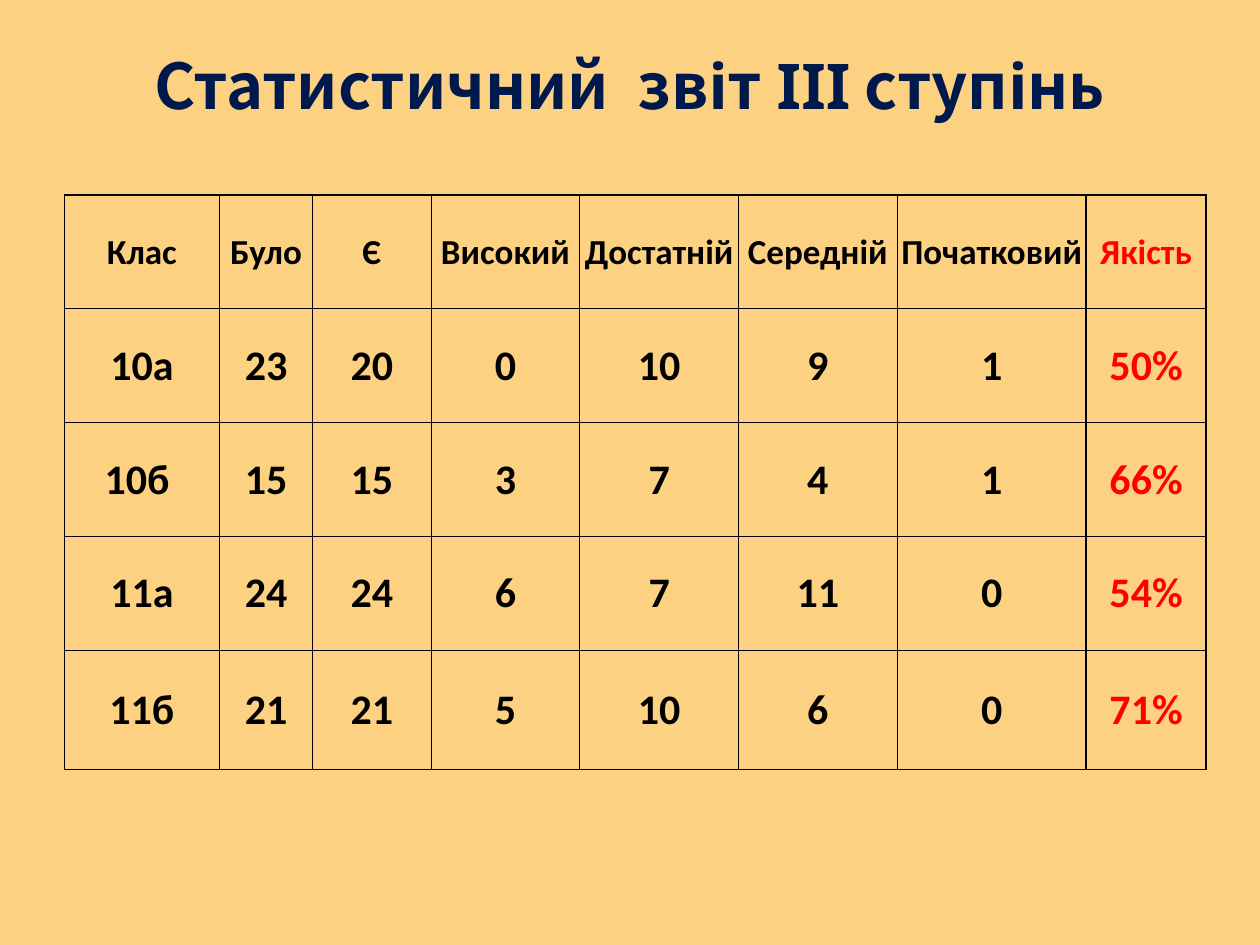
from lxml import etree
from pptx import Presentation
from pptx.dml.color import RGBColor
from pptx.enum.text import MSO_ANCHOR, PP_ALIGN
from pptx.oxml.ns import qn
from pptx.util import Pt

CENTER, MIDDLE = PP_ALIGN.CENTER, MSO_ANCHOR.MIDDLE
BACK, NAVY, BLACK, RED = "FCD181", "00194C", "000000", "FF0000"

TITLE = "Статистичний  звіт ІІІ ступінь"
ROWS = [
    ("Клас", "Було", "Є", "Високий", "Достатній", "Середній", "Початковий", "Якість"),
    ("10а", "23", "20", "0", "10", "9", "1", "50%"),
    ("10б ", "15", "15", "3", "7", "4", "1", "66%"),
    ("11а", "24", "24", "6", "7", "11", "0", "54%"),
    ("11б", "21", "21", "5", "10", "6", "0", "71%"),
]
COL_WIDTHS = [88.6, 53.3, 67.7, 85, 90.7, 90.7, 108, 68.4]
ROW_HEIGHTS = [65, 65, 65, 65, 68.4]
LAST_ROW, LAST_COL = len(ROWS) - 1, len(COL_WIDTHS) - 1


def rgb(color):
    return RGBColor.from_string(color)


def set_text(tf, text, size, font, color):
    tf.text = text
    p = tf.paragraphs[0]
    p.alignment = CENTER
    p.font.size = Pt(size)
    p.font.name = font
    p.font.bold = True
    p.font.color.rgb = rgb(color)


def set_borders(cell, widths):
    tcPr = cell._tc.get_or_add_tcPr()
    for i, (side, width) in enumerate(widths.items()):
        ln = etree.Element(qn(f"a:ln{side}"), w=str(Pt(width)))
        fill = etree.SubElement(ln, qn("a:solidFill"))
        etree.SubElement(fill, qn("a:srgbClr"), val=BLACK)
        tcPr.insert(i, ln)


prs = Presentation()
prs.slide_width, prs.slide_height = Pt(720), Pt(540)
s = prs.slides.add_slide(prs.slide_layouts[5])
s.background.fill.solid()
s.background.fill.fore_color.rgb = rgb(BACK)

title = s.shapes.title
title.left, title.top, title.width, title.height = Pt(0), Pt(18), Pt(720), Pt(60)
title.text_frame.vertical_anchor = MIDDLE
set_text(title.text_frame, TITLE, 36, "Noto Sans CJK KR", NAVY)

table = s.shapes.add_table(
    len(ROWS), len(COL_WIDTHS), Pt(36.8), Pt(111.4),
    Pt(sum(COL_WIDTHS)), Pt(sum(ROW_HEIGHTS))).table
for column, width in zip(table.columns, COL_WIDTHS):
    column.width = Pt(width)
for row, height in zip(table.rows, ROW_HEIGHTS):
    row.height = Pt(height)

for r, values in enumerate(ROWS):
    for c, value in enumerate(values):
        cell = table.cell(r, c)
        cell.fill.background()
        cell.vertical_anchor = MIDDLE
        cell.margin_left = cell.margin_top = cell.margin_right = Pt(0.7)
        cell.margin_bottom = Pt(0)
        set_text(cell.text_frame, value, 20 if r == 0 else 24, "Calibri",
                 RED if c == LAST_COL else BLACK)
        set_borders(cell, {
            "L": 1 if c in (0, LAST_COL) else 0.5,
            "R": 1 if c >= LAST_COL - 1 else 0.5,
            "T": 1 if r == 0 else 0.5,
            "B": 1 if r == LAST_ROW else 0.5,
        })

prs.save("out.pptx")
